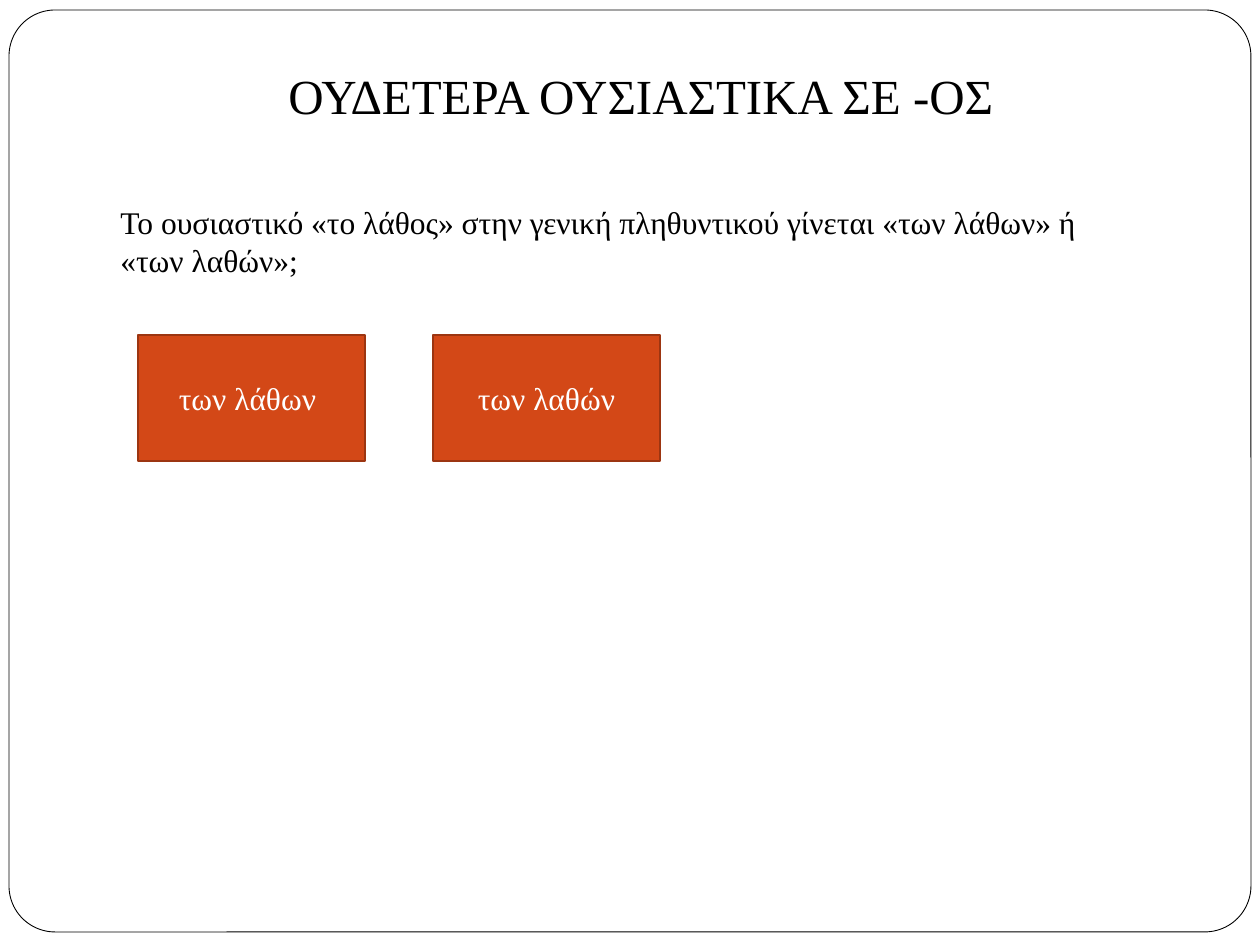
"""Build the Greek noun quiz slide with its two answer boxes."""
from pptx import Presentation
from pptx.dml.color import RGBColor as RGB
from pptx.enum.shapes import MSO_SHAPE as Kind
from pptx.enum.text import MSO_ANCHOR as Anchor, PP_ALIGN as Align
from pptx.util import Emu, Pt

PX = 914400 // 126
FONT = "Times New Roman"


def px(*nums):
    return [Emu(n * PX) for n in nums]


def paint(fmt, color):
    fmt.solid()
    fmt.fore_color.rgb = RGB.from_string(color)


def write(shape, text, size, color, align=Align.LEFT):
    frame = shape.text_frame
    frame.word_wrap = True
    frame.text = text
    para = frame.paragraphs[0]
    para.alignment = align
    font = para.runs[0].font
    font.name, font.size = FONT, Pt(size)
    paint(font.fill, color)


def add_box(slide, kind, area, fill, line, width):
    box = slide.shapes.add_shape(kind, *px(*area))
    box.shadow.inherit = False
    paint(box.fill, fill)
    paint(box.line.fill, line)
    box.line.width = Pt(width)
    return box


def add_text(slide, area, text, size):
    write(slide.shapes.add_textbox(*px(*area)), text, size, "000000")


def add_choice(slide, left, text):
    box = add_box(slide, Kind.RECTANGLE, (left, 335, 227, 126),
                  "D34817", "9C3511", 1)
    box.text_frame.vertical_anchor = Anchor.MIDDLE
    write(box, text, 18, "FFFFFF", Align.CENTER)


def main():
    deck = Presentation()
    deck.slide_width, deck.slide_height = px(1260, 945)
    slide = deck.slides.add_slide(deck.slide_layouts[6])
    frame = add_box(slide, Kind.ROUNDED_RECTANGLE, (9, 10, 1242, 922),
                    "FFFFFF", "000000", 0.5)
    frame.adjustments[0] = 0.05
    add_text(slide, (276, 59, 816, 72), "ΟΥΔΕΤΕΡΑ ΟΥΣΙΑΣΤΙΚΑ ΣΕ -ΟΣ", 28)
    add_text(slide, (108, 197, 1004, 89),
             "Το ουσιαστικό «το λάθος» στην γενική πληθυντικού γίνεται "
             "«των λάθων» ή «των λαθών»;", 18)
    for i, text in enumerate(("των λάθων ", "των λαθών")):
        add_choice(slide, 138 + 295 * i, text)
    deck.save("out.pptx")


if __name__ == "__main__":
    main()
